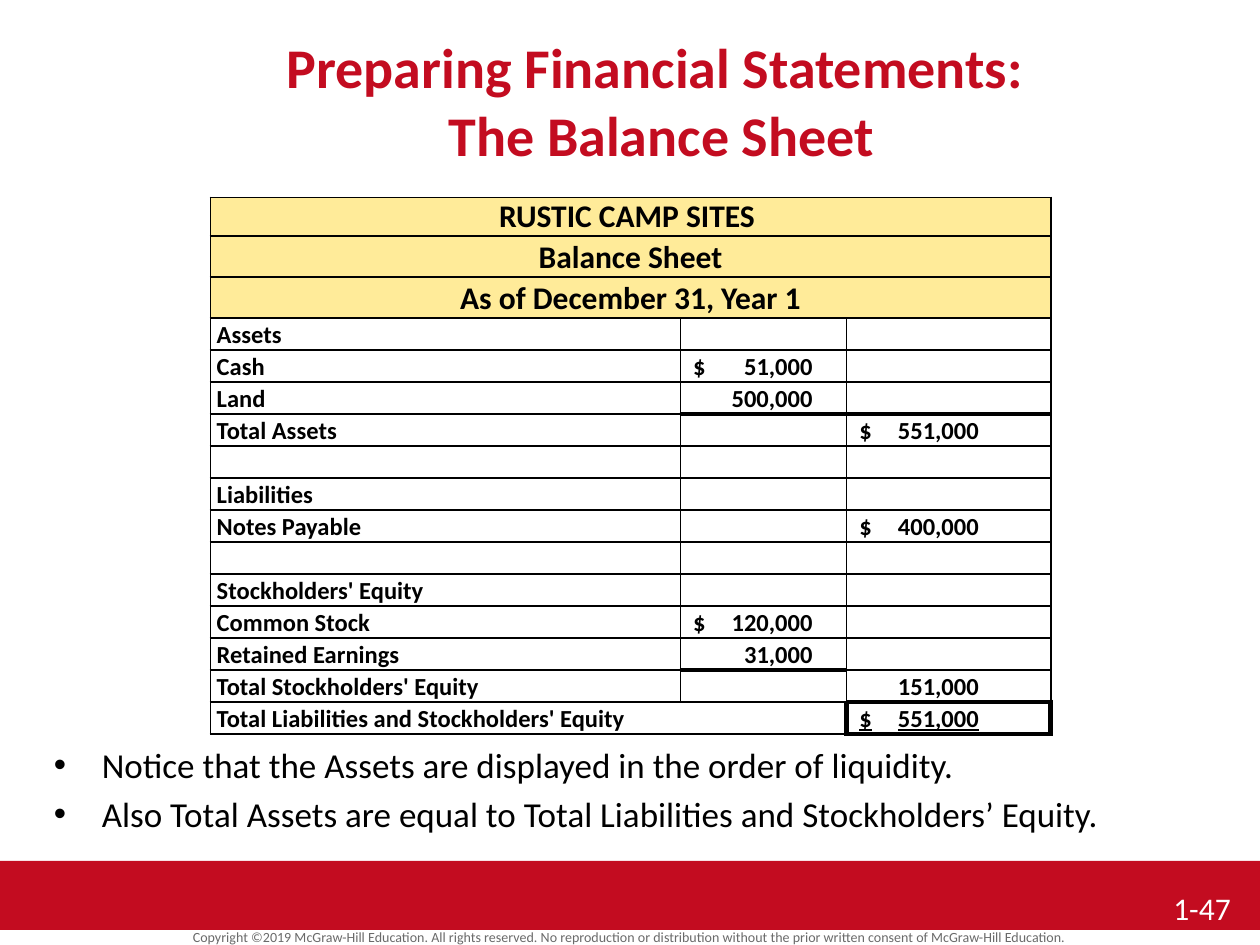
from lxml.etree import SubElement as Sub
from pptx import Presentation
from pptx.dml.color import RGBColor as RGB
from pptx.enum.shapes import MSO_SHAPE as Shape
from pptx.enum.text import MSO_ANCHOR as Anchor, PP_ALIGN as Align
from pptx.oxml.ns import qn
from pptx.util import Inches, Pt

RED = RGB(0xC3, 0x0C, 0x20)
GOLD = RGB(0xFF, 0xEB, 0x99)
GRAY = RGB(0x6A, 0x6A, 0x6A)
BLACK = RGB(0, 0, 0)
WHITE = RGB(255, 255, 255)

HEADS = ["RUSTIC CAMP SITES ", "Balance Sheet", "As of December 31, Year 1"]
ROWS = [
    ("Assets", "", ""),
    ("Cash", "$\t51,000", ""),
    ("Land", "\t500,000", ""),
    ("Total Assets", "", "$\t551,000"),
    ("", "", ""),
    ("Liabilities", "", ""),
    ("Notes Payable", "", "$\t400,000"),
    ("", "", ""),
    ("Stockholders' Equity", "", ""),
    ("Common Stock", "$\t120,000", ""),
    ("Retained Earnings", "\t31,000", ""),
    ("Total Stockholders' Equity", "", "\t151,000"),
    ("Total Liabilities and Stockholders' Equity", "", "$\t551,000"),
]
# Sides drawn with a heavy rule, by row and column
HEAVY = {(5, 1): "B", (5, 2): "B", (6, 1): "T", (6, 2): "T",
         (13, 1): "B", (14, 1): "T", (14, 2): "B",
         (15, 0): "R", (15, 1): "R", (15, 2): "LRTB"}
NOTES = ["Notice that the Assets are displayed in the order of liquidity.",
         "Also Total Assets are equal to Total Liabilities and Stockholders’ Equity."]


class Deck:
    """Holds the style and the slide; places are percent of the slide size."""
    font = "Calibri"

    def __init__(self, wide, high):
        self.prs = Presentation()
        self.prs.slide_width, self.prs.slide_height = Inches(wide), Inches(high)
        self.slide = self.prs.slides.add_slide(self.prs.slide_layouts[5])

    def x(self, part):
        return round(self.prs.slide_width * part / 100)

    def y(self, part):
        return round(self.prs.slide_height * part / 100)

    def area(self, left, top, width, height):
        return self.x(left), self.y(top), self.x(width), self.y(height)

    def style(self, para, size, color=BLACK, bold=False, line=False):
        for run in para.runs:
            font = run.font
            font.name, font.size, font.bold = self.font, Pt(size), bold
            font.color.rgb = color
            if line:
                font.underline = True

    def title(self, text, area, size):
        box = self.slide.shapes.title
        box.left, box.top, box.width, box.height = self.area(*area)
        frame = box.text_frame
        frame.text = text
        frame.vertical_anchor = Anchor.MIDDLE
        frame.paragraphs[0].alignment = Align.CENTER
        self.style(frame.paragraphs[0], size, RED, True)

    def band(self, area, color):
        bar = self.slide.shapes.add_shape(Shape.RECTANGLE, *self.area(*area))
        bar.shadow.inherit = False
        bar.fill.solid()
        bar.fill.fore_color.rgb = color
        bar.line.fill.background()

    def label(self, text, area, size, color):
        frame = self.slide.shapes.add_textbox(*self.area(*area)).text_frame
        frame.word_wrap = True
        frame.vertical_anchor = Anchor.MIDDLE
        frame.text = text
        frame.paragraphs[0].alignment = Align.CENTER
        self.style(frame.paragraphs[0], size, color)

    def bullets(self, lines, area, size):
        frame = self.slide.shapes.add_textbox(*self.area(*area)).text_frame
        frame.word_wrap = True
        frame.text = "\n".join(lines)
        for i, para in enumerate(frame.paragraphs):
            props = para._p.get_or_add_pPr()
            props.set("marL", str(Inches(0.38)))
            props.set("indent", str(-Inches(0.38)))
            Sub(props, qn("a:buFont"), typeface="Arial")
            Sub(props, qn("a:buChar"), char="•")
            if i:
                para.space_before = Pt(size * 0.2)
            self.style(para, size)

    def edges(self, cell, heavy):
        props = cell._tc.get_or_add_tcPr()
        for side in "LRTB":
            width = Pt(3 if side in heavy else 1)
            line = Sub(props, qn("a:ln" + side), w=str(width))
            fill = Sub(line, qn("a:solidFill"))
            Sub(fill, qn("a:srgbClr"), val=str(BLACK))

    def cell(self, cell, text, size, line=False):
        cell.margin_left = cell.margin_right = Inches(0.05)
        cell.margin_top = cell.margin_bottom = 0
        cell.vertical_anchor = Anchor.BOTTOM
        cell.text_frame.text = text
        para = cell.text_frame.paragraphs[0]
        if not text:
            para._p.get_or_add_endParaRPr().set("sz", str(size * 100))
            return para
        para.line_spacing = 1.07
        if "\t" in text:
            # Amounts line up on a right tab
            cell.margin_left = Inches(0.1)
            tabs = Sub(para._p.get_or_add_pPr(), qn("a:tabLst"))
            Sub(tabs, qn("a:tab"), pos=str(Inches(0.95)), algn="r")
        self.style(para, size, BLACK, True, line)
        return para

    def sheet(self, heads, rows, area, cols):
        top = len(heads)
        count = top + len(rows)
        table = self.slide.shapes.add_table(
            count, len(cols), *self.area(*area)).table
        table.first_row = table.horz_banding = False
        for col, width in zip(table.columns, cols):
            col.width = self.x(width)
        for r, row in enumerate(table.rows):
            row.height = self.y(4.1 if r == 0 else 4.33 if r < top else 3.39)
            for c, cell in enumerate(row.cells):
                self.edges(cell, HEAVY.get((r, c), ""))
                if r < top:
                    cell.fill.solid()
                    cell.fill.fore_color.rgb = GOLD
                    para = self.cell(cell, "" if c else heads[r], 18)
                    para.alignment = Align.CENTER
                    if r == 0:
                        para.line_spacing = 1.0
                else:
                    cell.fill.background()
                    last = r == count - 1 and c == len(cols) - 1
                    self.cell(cell, rows[r - top][c], 14, last)
        # Headings span the sheet, the last label spans two columns
        for r in range(top):
            table.cell(r, 0).merge(table.cell(r, len(cols) - 1))
        table.cell(count - 1, 0).merge(table.cell(count - 1, 1))


def main():
    deck = Deck(10, 7.5)
    # Footer
    deck.band((0, 91.1, 100, 7.3), RED)
    deck.label("Copyright ©2019 McGraw-Hill Education. All rights reserved. "
               "No reproduction or distribution without the prior written "
               "consent of McGraw-Hill Education.",
               (0, 97.9, 100, 2.5), 8, GRAY)
    # Title, notes and page number
    deck.title("Preparing Financial Statements: \vThe Balance Sheet",
               (7.5, 2.27, 90, 16.67), 32)
    deck.bullets(NOTES, (3.3, 78, 94.2, 14), 20)
    deck.label("1-47", (90.8, 93.3, 9.2, 5.6), 18, WHITE)
    # Balance sheet
    deck.sheet(HEADS, ROWS, (16.7, 20.9, 66.7, 56.8), (37.3, 13.2, 16.2))
    deck.prs.save("out.pptx")


if __name__ == "__main__":
    main()
